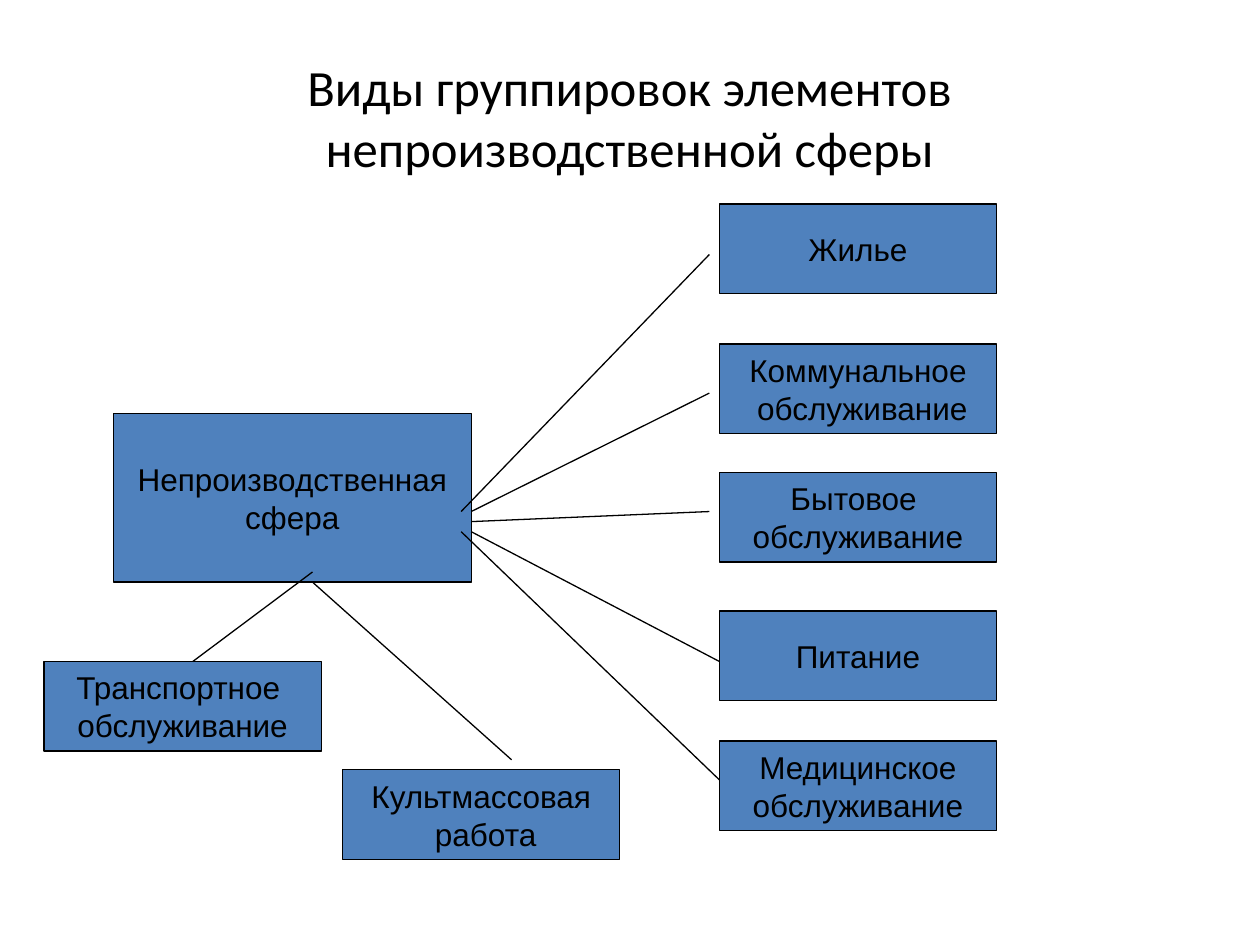
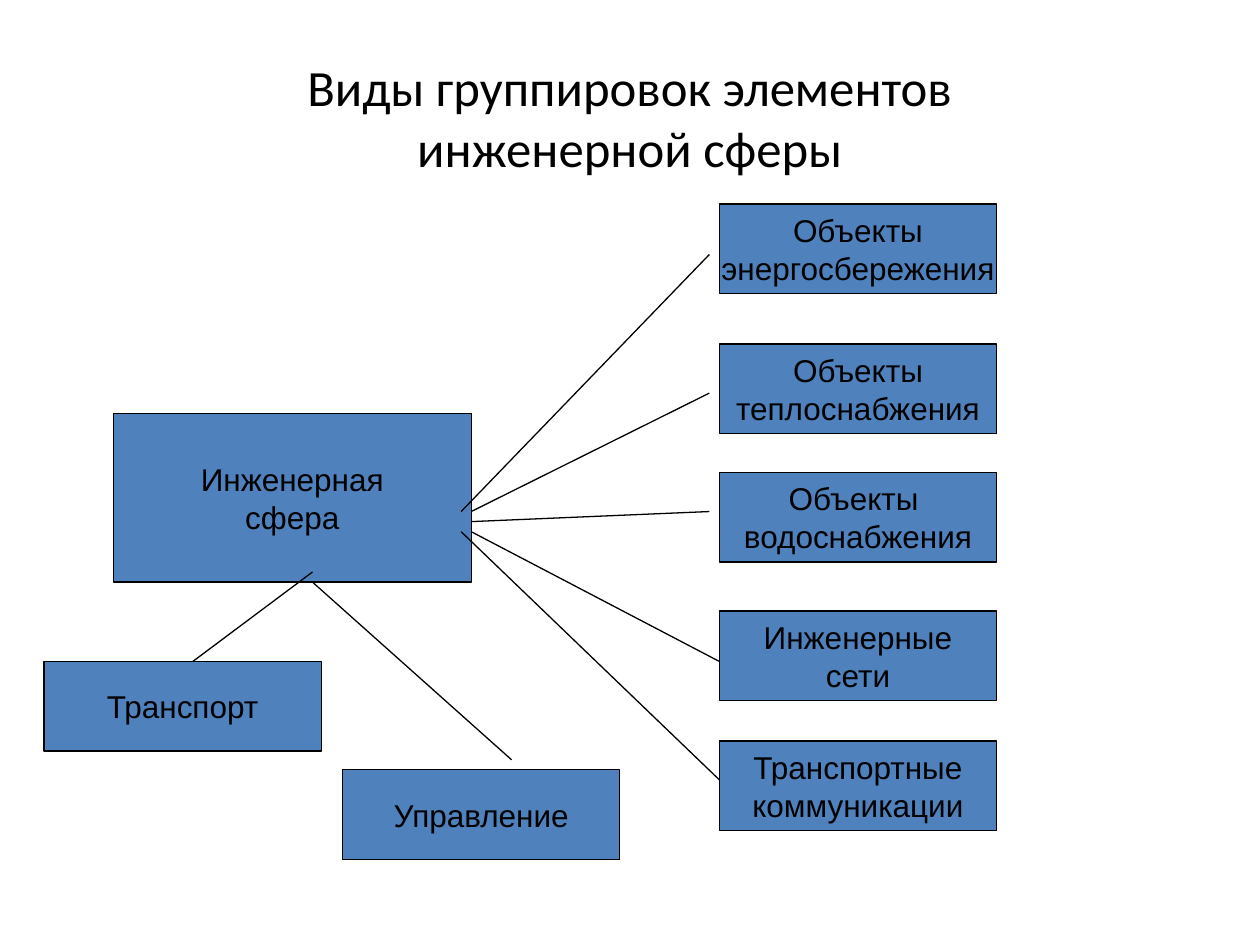
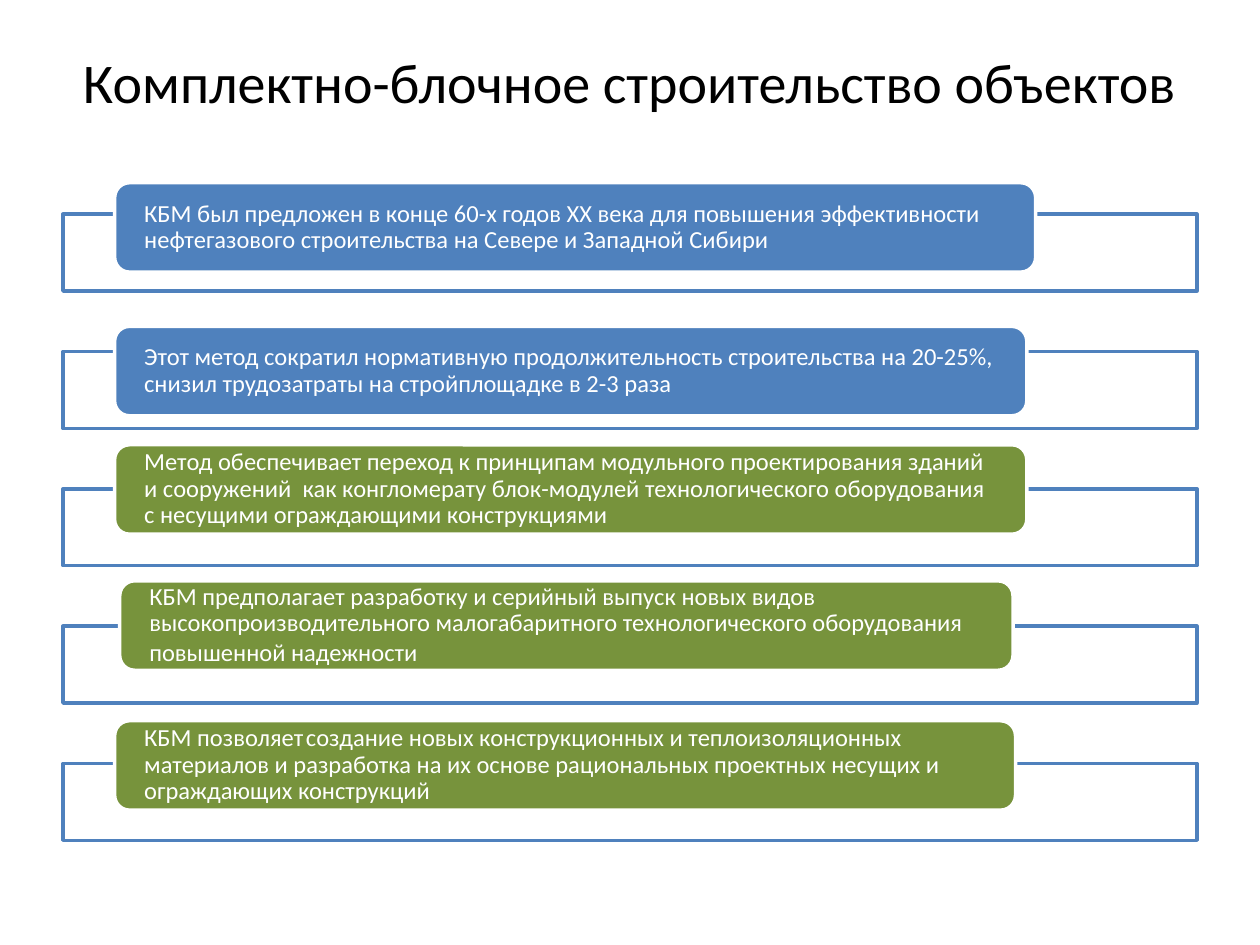
from pptx import Presentation
from pptx import util as u
from pptx.dml.color import RGBColor
from pptx.enum import shapes, text
from pptx.oxml.ns import qn
from lxml import etree

PX = 9144  # 100 px to the inch
BLUE, GREEN, BLACK, WHITE = "4F81BD", "77933C", "000000", "FFFFFF"

deck = Presentation()
deck.slide_width, deck.slide_height = 1000 * PX, 750 * PX


def hue(code):
    return RGBColor.from_string(code)


def block(page, kind, area, fill, edge, width):
    """Add a filled, outlined shape without shadow."""
    item = page.shapes.add_shape(kind, *[n * PX for n in area])
    item.shadow.inherit = False
    item.fill.solid()
    item.fill.fore_color.rgb = hue(fill)
    item.line.color.rgb = hue(edge)
    item.line.width = u.Pt(width)
    return item


# Titles: wording, size, height
titles = [
    ("Виды группировок элементов\vнепроизводственной сферы", 29, 125),
    ("Виды группировок элементов\vинженерной сферы", 29, 125),
    ("Комплектно-блочное строительство объектов", 32, 69),
]
pages = []
for words, size, high in titles:
    page = deck.slides.add_slide(deck.slide_layouts[5])
    head = page.shapes.title
    head.left, head.top, head.width, head.height = 50 * PX, 30 * PX, 900 * PX, high * PX
    frame = head.text_frame
    frame.text = words
    frame.auto_size = text.MSO_AUTO_SIZE.NONE
    frame.vertical_anchor = text.MSO_ANCHOR.MIDDLE
    line = frame.paragraphs[0]
    line.alignment = text.PP_ALIGN.CENTER
    for run in line.runs:
        run.font.name = "Calibri"
        run.font.size = u.Pt(size)
        run.font.color.rgb = hue(BLACK)
    pages.append(page)

# Group charts: a core box, five boxes on the right, two below
right, wide, high = 571, 220, 71
areas = [(90, 328, 284, 134)]
areas += [(right, top, wide, high) for top in (162, 273, 375, 485, 588)]
areas += [(35, 525, wide, high), (272, 611, wide, high)]
links = [
    (366, 406, 563, 202),
    (374, 406, 563, 312),
    (374, 414, 563, 406),
    (374, 422, right, 525),
    (366, 422, right, 619),
    (248, 454, 153, 525),
    (248, 462, 406, 603),
]
groups = [
    ["Непроизводственная\nсфера", "Жилье", "Коммунальное\n обслуживание",
     "Бытовое \nобслуживание", "Питание", "Медицинское\nобслуживание",
     "Транспортное \nобслуживание", "Культмассовая\n работа"],
    ["Инженерная\nсфера", "Объекты\nэнергосбережения", "Объекты\nтеплоснабжения",
     "Объекты \nводоснабжения", "Инженерные\nсети", "Транспортные\nкоммуникации",
     "Транспорт", "Управление"],
]
for page, names in zip(pages, groups):
    for name, area in zip(names, areas):
        box = block(page, shapes.MSO_SHAPE.RECTANGLE, area, BLUE, BLACK, 0.75)
        frame = box.text_frame
        frame.text = name
        frame.word_wrap = False
        frame.vertical_anchor = text.MSO_ANCHOR.MIDDLE
        for line in frame.paragraphs:
            line.alignment = text.PP_ALIGN.CENTER
            font = line.runs[0].font
            font.name, font.size = "Arial", u.Pt(18)
            font.color.rgb = hue(BLACK)
    for ends in links:
        link = page.shapes.add_connector(shapes.MSO_CONNECTOR.STRAIGHT, *[n * PX for n in ends])
        link.line.color.rgb = hue(BLACK)
        link.line.width = u.Pt(0.75)
        etree.SubElement(link._element.spPr, qn("a:effectLst"))

# List of facts: left, top, width, fill, runs with their sizes
facts = [
    (91, 145, 731, BLUE, [("КБМ был предложен в конце 60-х годов ХХ века для повышения "
     "эффективности  нефтегазового строительства на Севере и Западной Сибири", 14)]),
    (91, 259, 724, BLUE, [("Этот метод сократил нормативную продолжительность строительства "
     "на 20-25%, снизил трудозатраты на стройплощадке в 2-3 раза", 14)]),
    (91, 353, 724, GREEN, [("Метод обеспечивает переход к принципам модульного проектирования "
     "зданий и сооружений  как конгломерату блок-модулей технологического оборудования "
     "с несущими ограждающими конструкциями", 14)]),
    (95, 461, 709, GREEN, [("КБМ предполагает разработку и серийный выпуск новых видов "
     "высокопроизводительного малогабаритного технологического оборудования "
     "повышенной надежности ", 14), (" ", 16)]),
    (91, 572, 715, GREEN, [("КБМ позволяет", 14), (" ", 6),
     ("создание новых конструкционных и теплоизоляционных материалов и разработка "
      "на их основе рациональных проектных несущих и ограждающих конструкций", 14)]),
]
for row, (left, top, width, fill, parts) in enumerate(facts):
    block(pages[2], shapes.MSO_SHAPE.RECTANGLE, (50, 170 + 109 * row, 900, 61), WHITE, BLUE, 2)
    card = block(pages[2], shapes.MSO_SHAPE.ROUNDED_RECTANGLE, (left, top, width, high), fill, WHITE, 2)
    frame = card.text_frame
    frame.word_wrap = True
    frame.vertical_anchor = text.MSO_ANCHOR.MIDDLE
    frame.margin_left = frame.margin_right = 20 * PX
    frame.margin_top = frame.margin_bottom = 0
    line = frame.paragraphs[0]
    line.alignment = text.PP_ALIGN.LEFT
    line.line_spacing = 0.9
    for words, size in parts:
        run = line.add_run()
        run.text = words
        run.font.name, run.font.size = "Calibri", u.Pt(size)
        run.font.color.rgb = hue(WHITE)

deck.save("out.pptx")
